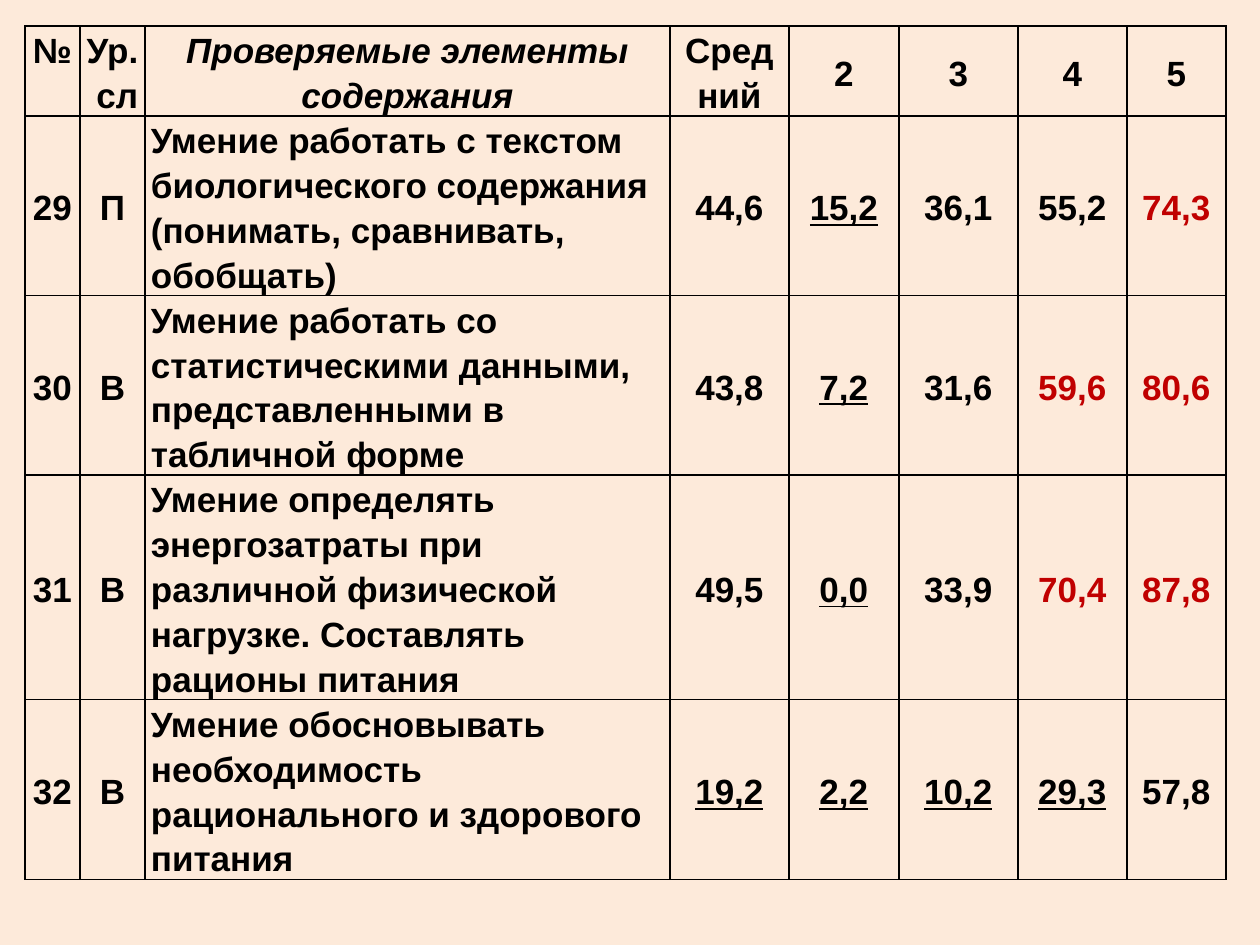
from lxml.etree import SubElement
from pptx import Presentation
from pptx.dml.color import RGBColor
from pptx.enum.text import MSO_ANCHOR, PP_ALIGN
from pptx.oxml.ns import qn
from pptx.util import Pt

PX = 914400 / 126
C = {"bg": "FDEADA", "text": "000000", "high": "C00000", "border": "000000"}
LOW, HIGH = 30, 58


def px(n):
    return int(n * PX)


def write_cell(cell, text, color="text", italic=False, underline=False,
               align=PP_ALIGN.CENTER, anchor=MSO_ANCHOR.MIDDLE):
    cell.margin_left = cell.margin_right = px(6)
    cell.margin_top = cell.margin_bottom = 0
    cell.vertical_anchor = anchor
    tf = cell.text_frame
    tf.text = text
    for p in tf.paragraphs:
        p.alignment = align
        p.line_spacing = 1.15
        r = p.runs[0]
        r.font.name = "Arial"
        r.font.size = Pt(20)
        r.font.bold = True
        r.font.italic = italic
        r.font.underline = underline
        r.font.color.rgb = RGBColor.from_string(C[color])
    tcPr = cell._tc.get_or_add_tcPr()
    for side in ("a:lnL", "a:lnR", "a:lnT", "a:lnB"):
        ln = SubElement(tcPr, qn(side), w=str(Pt(1)))
        fill = SubElement(ln, qn("a:solidFill"))
        SubElement(fill, qn("a:srgbClr"), val=C["border"])
    cell.fill.background()


prs = Presentation()
prs.slide_width, prs.slide_height = px(1260), px(945)
s = prs.slides.add_slide(prs.slide_layouts[6])
s.background.fill.solid()
s.background.fill.fore_color.rgb = RGBColor.from_string(C["bg"])

cols = [55, 65, 525, 119, 110, 119, 109, 99]
heights = [90, 179, 179, 224, 179]
header = ["№", "Ур.  сл", "Проверяемые элементы содержания", "Сред\nний", "2", "3", "4", "5"]
tasks = [
    ("29", "П", "Умение работать с текстом биологического содержания (понимать, сравнивать, обобщать)",
     [44.6, 15.2, 36.1, 55.2, 74.3]),
    ("30", "В", "Умение работать со статистическими данными, представленными в табличной форме",
     [43.8, 7.2, 31.6, 59.6, 80.6]),
    ("31", "В", "Умение определять энергозатраты при различной физической нагрузке. Составлять рационы питания",
     [49.5, 0.0, 33.9, 70.4, 87.8]),
    ("32", "В", "Умение обосновывать необходимость рационального и здорового питания",
     [19.2, 2.2, 10.2, 29.3, 57.8]),
]

frame = s.shapes.add_table(len(heights), len(cols), px(25), px(26), px(sum(cols)), px(sum(heights)))
table = frame.table
table.first_row = table.horz_banding = False
for col, w in zip(table.columns, cols):
    col.width = px(w)
for row, h in zip(table.rows, heights):
    row.height = px(h)

for j, text in enumerate(header):
    write_cell(table.cell(0, j), text, italic=j == 2,
               anchor=MSO_ANCHOR.TOP if j < 3 else MSO_ANCHOR.MIDDLE)

for i, (number, level, skill, scores) in enumerate(tasks, 1):
    write_cell(table.cell(i, 0), number)
    write_cell(table.cell(i, 1), level)
    write_cell(table.cell(i, 2), skill, align=PP_ALIGN.LEFT, anchor=MSO_ANCHOR.TOP)
    for j, score in enumerate(scores, 3):
        write_cell(table.cell(i, j), f"{score:.1f}".replace(".", ","),
                   color="high" if score > HIGH else "text", underline=score < LOW)

prs.save("out.pptx")
